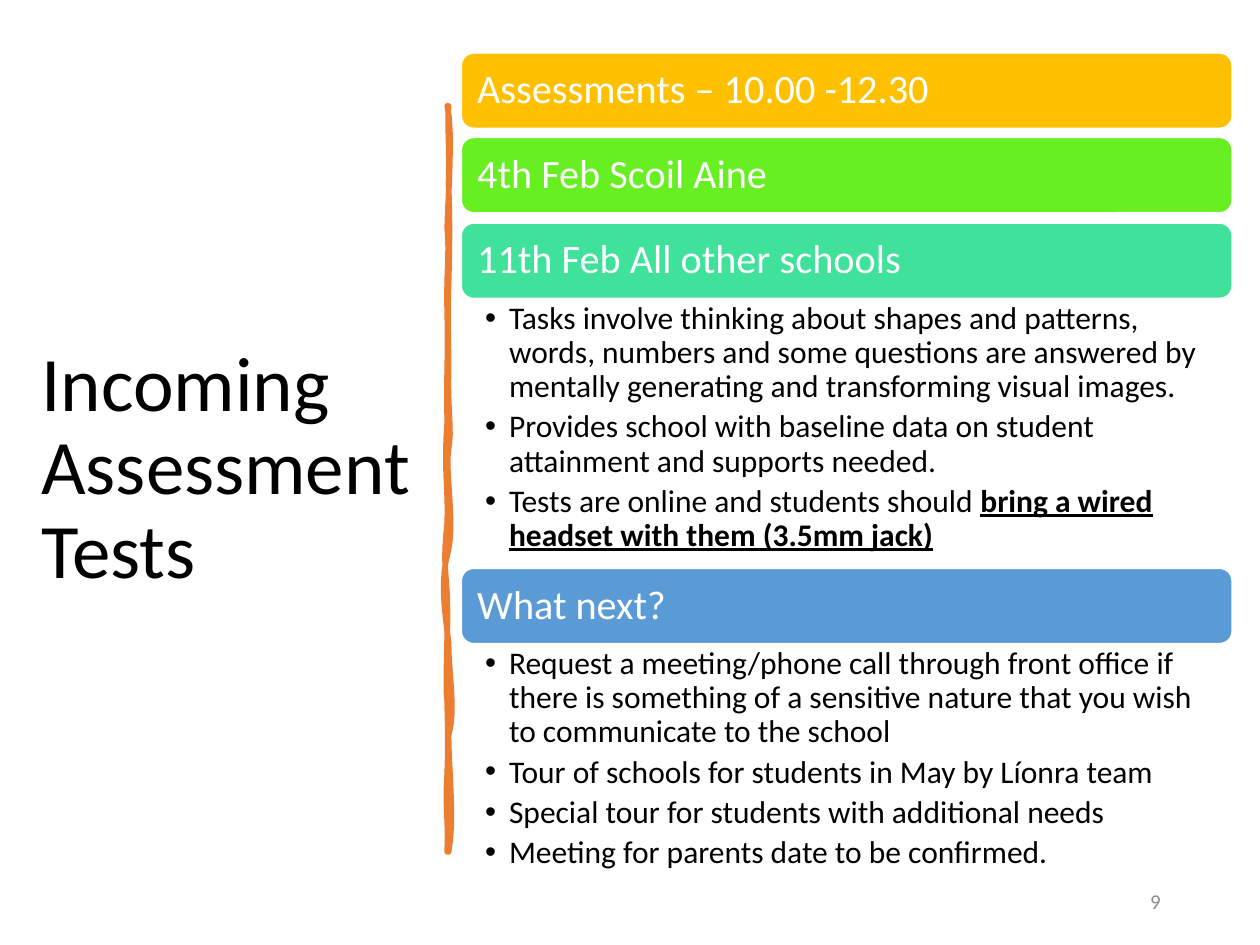
from lxml.etree import SubElement
from pptx import Presentation
from pptx.dml.color import RGBColor
from pptx.enum.shapes import MSO_SHAPE
from pptx.enum.text import MSO_ANCHOR, PP_ALIGN
from pptx.oxml.ns import qn
from pptx.util import Inches, Pt

WHITE = RGBColor(0xFF, 0xFF, 0xFF)
BLACK = RGBColor(0x00, 0x00, 0x00)
GRAY = RGBColor(0x8C, 0x8C, 0x8C)
ORANGE = RGBColor(0xED, 0x7D, 0x31)
GOLD = RGBColor(0xFF, 0xC0, 0x00)
LIME = RGBColor(0x67, 0xEF, 0x21)
MINT = RGBColor(0x3F, 0xE1, 0x9B)
BLUE = RGBColor(0x5B, 0x9B, 0xD5)


def write_text(shape, paragraphs, size, color=BLACK, align=PP_ALIGN.LEFT,
               anchor=MSO_ANCHOR.MIDDLE, insets=(0.1, 0.05, 0.1, 0.05),
               line_spacing=0.9, space_after=0, bullet=False):
    """Each paragraph is a list of runs: plain text, then optional emphasised text."""
    frame = shape.text_frame
    frame.word_wrap = True
    frame.vertical_anchor = anchor
    frame.margin_left, frame.margin_top, frame.margin_right, frame.margin_bottom = map(Inches, insets)
    for index, runs in enumerate(paragraphs):
        paragraph = frame.add_paragraph() if index else frame.paragraphs[0]
        paragraph.alignment = align
        paragraph.line_spacing = line_spacing
        paragraph.space_after = Pt(space_after)
        if bullet:
            properties = paragraph._p.get_or_add_pPr()
            properties.set("marL", str(Inches(0.19)))
            properties.set("indent", str(Inches(-0.19)))
            SubElement(properties, qn("a:buFont"), typeface="Arial")
            SubElement(properties, qn("a:buChar"), char="•")
        for position, text in enumerate(runs):
            run = paragraph.add_run()
            run.text = text
            run.font.name = "Calibri"
            run.font.size = Pt(size)
            run.font.color.rgb = color
            if position:
                run.font.bold = True
                run.font.underline = True


presentation = Presentation()
presentation.slide_width = Inches(10)
presentation.slide_height = Inches(7.5)
slide = presentation.slides.add_slide(presentation.slide_layouts[6])
shapes = slide.shapes

title = shapes.add_textbox(Inches(0.23), Inches(0.7), Inches(3.17), Inches(6.06))
write_text(title, [["Incoming Assessment Tests"]], 44)

# Hand-drawn divider: cubic curves down the right edge and back up the left
divider_start = (3.56, 0.84)
divider_curves = [
    (3.55, 1.03, 3.57, 1.16, 3.56, 1.46), (3.57, 1.74, 3.57, 1.91, 3.56, 2.26),
    (3.55, 2.58, 3.56, 2.62, 3.56, 2.94), (3.55, 3.25, 3.59, 3.42, 3.56, 3.56),
    (3.53, 3.72, 3.61, 4.14, 3.56, 4.36), (3.49, 4.62, 3.53, 4.83, 3.56, 5.1),
    (3.56, 5.35, 3.62, 5.63, 3.56, 5.84), (3.56, 6.06, 3.61, 6.53, 3.56, 6.76),
    (3.56, 6.75, 3.55, 6.76, 3.55, 6.76), (3.56, 6.45, 3.53, 6.44, 3.55, 6.13),
    (3.56, 5.83, 3.55, 5.7, 3.55, 5.57), (3.53, 5.46, 3.56, 4.94, 3.55, 4.77),
    (3.55, 4.62, 3.51, 4.47, 3.55, 4.15), (3.56, 3.86, 3.52, 3.73, 3.55, 3.35),
    (3.54, 3, 3.56, 2.79, 3.55, 2.5), (3.54, 2.16, 3.57, 2.03, 3.55, 1.81),
    (3.55, 1.65, 3.6, 1.04, 3.55, 0.84),
]
STEPS = 8
points = []
x0, y0 = divider_start
for x1, y1, x2, y2, x3, y3 in divider_curves:
    for step in range(1, STEPS + 1):
        t = step / STEPS
        weights = ((1 - t) ** 3, 3 * t * (1 - t) ** 2, 3 * t ** 2 * (1 - t), t ** 3)
        x = sum(weight * value for weight, value in zip(weights, (x0, x1, x2, x3)))
        y = sum(weight * value for weight, value in zip(weights, (y0, y1, y2, y3)))
        points.append((Inches(x), Inches(y)))
    x0, y0 = x3, y3
builder = shapes.build_freeform(*map(Inches, divider_start))
builder.add_line_segments(points, close=True)
divider = builder.convert_to_shape()
divider.shadow.inherit = False
divider.fill.solid()
divider.fill.fore_color.rgb = ORANGE
divider.line.color.rgb = ORANGE
divider.line.width = Pt(3.25)
line_properties = divider.line._get_or_add_ln()
SubElement(line_properties, qn("a:round"))

slide_number = shapes.add_textbox(Inches(7.06), Inches(6.95), Inches(2.25), Inches(0.4))
write_text(slide_number, [["9"]], 12, color=GRAY, align=PP_ALIGN.RIGHT, line_spacing=1, space_after=6)

LEFT, WIDTH, BAND_HEIGHT = Inches(3.66), Inches(6.12), Inches(0.6)
bands = [
    ("Assessments – 10.00 -12.30", 0.42, GOLD),
    ("4th Feb Scoil Aine", 1.09, LIME),
    ("11th Feb All other schools", 1.77, MINT),
    ("What next?", 4.51, BLUE),
]
for text, top, color in bands:
    band = shapes.add_shape(MSO_SHAPE.ROUNDED_RECTANGLE, LEFT, Inches(top), WIDTH, BAND_HEIGHT)
    band.shadow.inherit = False
    band.fill.solid()
    band.fill.fore_color.rgb = color
    band.line.color.rgb = WHITE
    band.line.width = Pt(1)
    write_text(band, [[text]], 23, color=WHITE)

bullet_lists = [
    (2.37, 2.13, [
        ["Tasks involve thinking about shapes and patterns, words, numbers and some questions "
         "are answered by mentally generating and transforming visual images."],
        ["Provides school with baseline data on student attainment and supports needed."],
        ["Tests are online and students should ", "bring a wired headset with them (3.5mm jack)"],
    ]),
    (5.11, 1.93, [
        ["Request a meeting/phone call through front office if there is something of a "
         "sensitive nature that you wish to communicate to the school"],
        ["Tour of schools for students in May by Líonra team"],
        ["Special tour for students with additional needs"],
        ["Meeting for parents date to be confirmed."],
    ]),
]
for top, height, items in bullet_lists:
    bullet_box = shapes.add_textbox(LEFT, Inches(top), WIDTH, Inches(height))
    write_text(bullet_box, items, 18, anchor=MSO_ANCHOR.TOP, insets=(0.19, 0.03, 0.18, 0.03),
               space_after=3.6, bullet=True)

presentation.save("out.pptx")
